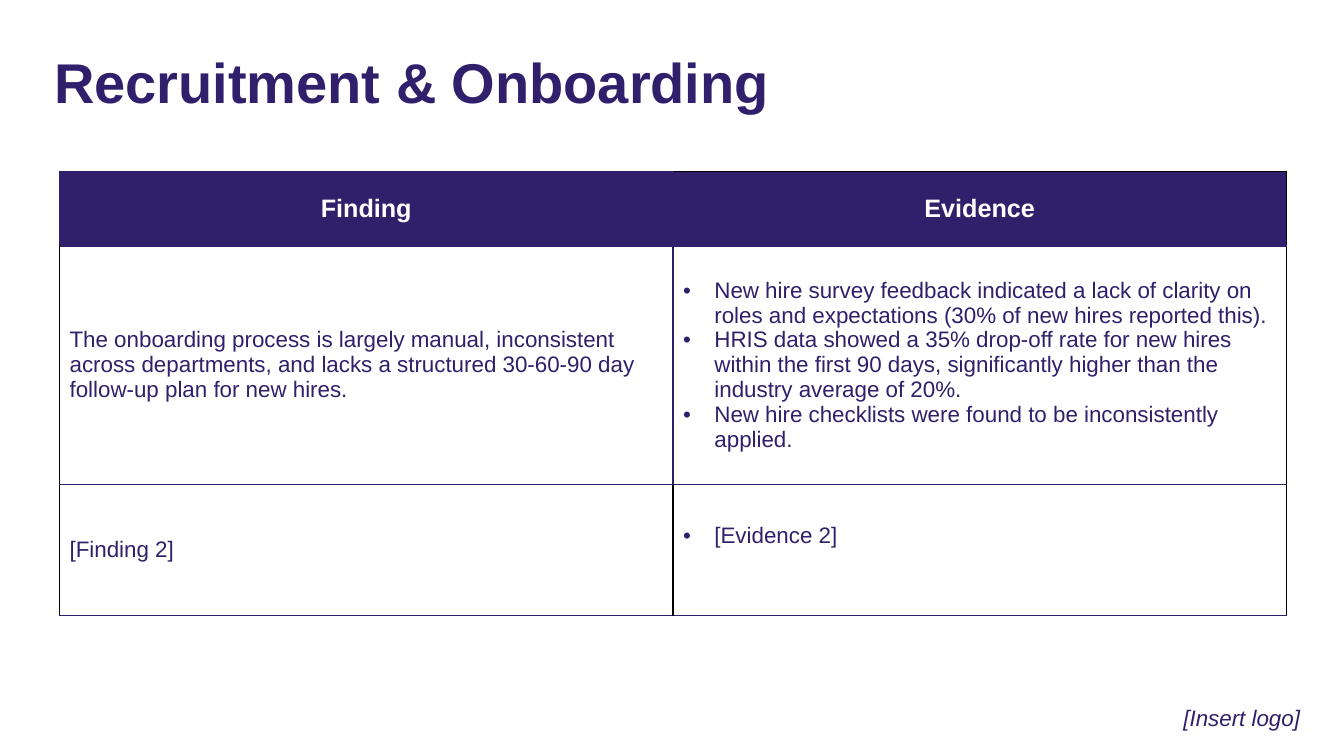
import pptx
import pptx.dml.color
import pptx.enum.text
import pptx.oxml
import pptx.oxml.ns
import pptx.util
from dataclasses import dataclass

Cm, Pt = pptx.util.Cm, pptx.util.Pt
ALIGN = pptx.enum.text.PP_ALIGN
ANCHOR = pptx.enum.text.MSO_ANCHOR
NS = pptx.oxml.ns.nsdecls("a")


@dataclass(frozen=True)
class Theme:
    font: str = "Arial"
    purple: str = "30206B"
    white: str = "FFFFFF"
    black: str = "000000"
    title: int = 40
    header: int = 18
    body: int = 16
    border: int = 1


def rgb(value):
    return pptx.dml.color.RGBColor.from_string(value)


def write(p, text, *, font, size, color, bold=False, italic=False,
          align=ALIGN.LEFT, spacing=None, bullet=False):
    """Put formatted text in a paragraph."""
    p.alignment = align
    if spacing:
        p.line_spacing = spacing
    if bullet:
        pPr = p._p.get_or_add_pPr()
        indent = Cm(0.79)
        pPr.set("marL", str(indent))
        pPr.set("indent", str(-indent))
        pPr.append(pptx.oxml.parse_xml(f'<a:buFont {NS} typeface="{font}"/>'))
        pPr.append(pptx.oxml.parse_xml(f'<a:buChar {NS} char="•"/>'))
    r = p.add_run()
    r.text = text
    f = r.font
    f.name, f.size, f.bold, f.italic = font, Pt(size), bold, italic
    f.color.rgb = rgb(color)


class Deck:
    def __init__(self, theme):
        self.theme = theme
        self.prs = pptx.Presentation()
        self.prs.slide_width, self.prs.slide_height = Cm(33.87), Cm(19.05)
        self.s = self.prs.slides.add_slide(self.prs.slide_layouts[6])

    def text(self, text, left, top, width, height, *, anchor, right_inset=0, **fmt):
        sp = self.s.shapes.add_textbox(Cm(left), Cm(top), Cm(width), Cm(height))
        tf = sp.text_frame
        tf.word_wrap = True
        tf.vertical_anchor = anchor
        tf.margin_left = tf.margin_top = tf.margin_bottom = 0
        tf.margin_right = Cm(right_inset)
        write(tf.paragraphs[0], text, font=self.theme.font,
              color=self.theme.purple, spacing=0.9, **fmt)

    def table(self, rows, left, top, width, heights):
        columns = len(rows[0])
        frame = self.s.shapes.add_table(len(rows), columns, Cm(left), Cm(top),
                                        Cm(width), Cm(sum(heights)))
        table = frame.table
        table.first_row = table.horz_banding = False
        for column in table.columns:
            column.width = Cm(width / columns)
        for i, (row, height) in enumerate(zip(rows, heights)):
            table.rows[i].height = Cm(height)
            for j, (lines, borders) in enumerate(row):
                self.cell(table.cell(i, j), lines, borders, header=i == 0, bullet=i > 0 and j == 1)
        return table

    def cell(self, cell, lines, borders, *, header, bullet):
        t = self.theme
        cell.vertical_anchor = ANCHOR.MIDDLE
        # Borders: one letter for each of left, right, top, bottom
        tcPr = cell._tc.get_or_add_tcPr()
        colors = {"P": t.purple, "B": t.black}
        for side, letter in zip("LRTB", borders):
            tcPr.append(pptx.oxml.parse_xml(
                f'<a:ln{side} {NS} w="{Pt(t.border)}"><a:solidFill>'
                f'<a:srgbClr val="{colors[letter]}"/></a:solidFill></a:ln{side}>'))
        if header:
            cell.fill.solid()
            cell.fill.fore_color.rgb = rgb(t.purple)
        else:
            cell.fill.background()
        tf = cell.text_frame
        for k, line in enumerate(lines):
            p = tf.add_paragraph() if k else tf.paragraphs[0]
            write(p, line, font=t.font, size=t.header if header else t.body,
                  color=t.white if header else t.purple, bold=header, bullet=bullet,
                  align=ALIGN.CENTER if header else ALIGN.LEFT)


def main():
    theme = Theme()
    deck = Deck(theme)

    # Title
    deck.text("Recruitment & Onboarding", 1.37, 1.32, 31.17, 1.68,
              anchor=ANCHOR.MIDDLE, size=theme.title, bold=True)

    # Findings table
    rows = [
        [(["Finding"], "PPPP"), (["Evidence"], "PBBP")],
        [(["The onboarding process is largely manual, inconsistent across departments, "
           "and lacks a structured 30-60-90 day follow-up plan for new hires."], "BPPP"),
         (["New hire survey feedback indicated a lack of clarity on roles and "
           "expectations (30% of new hires reported this).",
           "HRIS data showed a 35% drop-off rate for new hires within the first 90 days, "
           "significantly higher than the industry average of 20%.",
           "New hire checklists were found to be inconsistently applied."], "PBPP")],
        [(["[Finding 2]"], "BBPP"), (["[Evidence 2]"], "BBPP")],
    ]
    table = deck.table(rows, 1.5, 4.33, 30.92, [1.87, 6, 3.3])
    table.cell(2, 1).margin_bottom = Cm(0.84)

    # Logo placeholder text
    deck.text("[Insert logo]", 29.54, 17.07, 3.91, 1.36, anchor=ANCHOR.BOTTOM,
              right_inset=0.4, size=theme.body, italic=True, align=ALIGN.CENTER)

    deck.prs.save("out.pptx")


if __name__ == "__main__":
    main()
